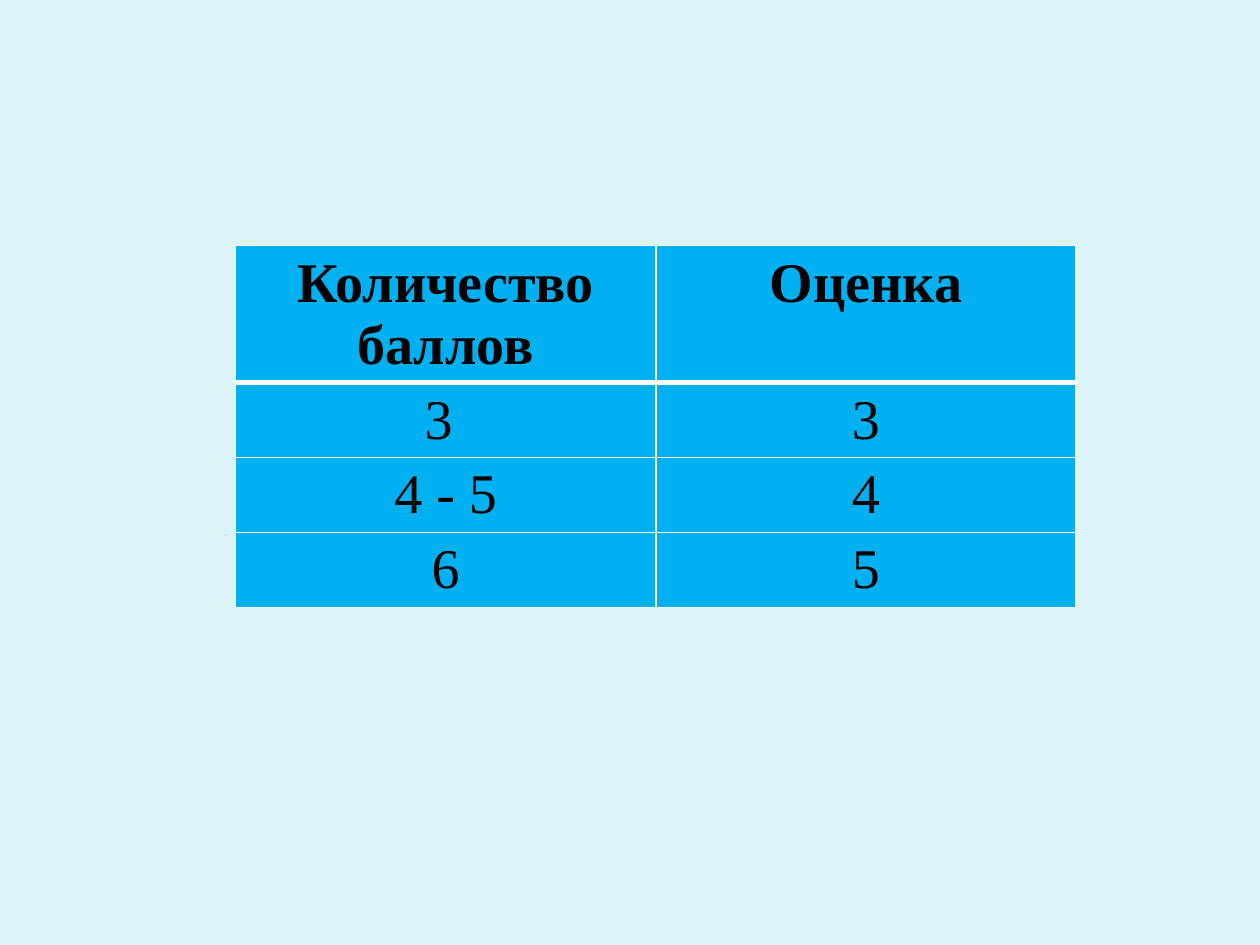
"""Build a slide with a table that turns points into grades."""
from lxml.etree import SubElement
from pptx import Presentation
from pptx.dml.color import RGBColor
from pptx.enum.text import PP_ALIGN as Align
from pptx.oxml.ns import qn
from pptx.util import Inches, Pt

BACKGROUND = RGBColor(0xDB, 0xF5, 0xF9)
CELL_FILL = RGBColor(0x00, 0xB0, 0xF0)
BORDER = RGBColor(0xFF, 0xFF, 0xFF)
TEXT = RGBColor(0x00, 0x00, 0x00)
FONT = "Times New Roman"
ROWS = [
    (["Количество", "баллов"], ["Оценка"]),
    (["3 "], ["3"]),
    (["4 - 5"], ["4"]),
    (["6"], ["5"]),
]


def set_borders(cell, widths):
    properties = cell._tc.get_or_add_tcPr()
    for index, (side, width) in enumerate(widths.items()):
        line = properties.makeelement(qn(f"a:ln{side}"), {"w": str(Pt(width))})
        fill = SubElement(line, qn("a:solidFill"))
        SubElement(fill, qn("a:srgbClr"), val=str(BORDER))
        properties.insert(index, line)


def write_cell(cell, lines, bold):
    frame = cell.text_frame
    for index, text in enumerate(lines):
        paragraph = frame.add_paragraph() if index else frame.paragraphs[0]
        paragraph.alignment = Align.CENTER
        run = paragraph.add_run()
        run.text = text
        run.font.name = FONT
        run.font.size = Pt(32)
        run.font.bold = bold
        run.font.color.rgb = TEXT


def add_grade_table(slide, left, top, width, height):
    shape = slide.shapes.add_table(len(ROWS), len(ROWS[0]), left, top, width, height)
    table = shape.table
    for row_index, row in enumerate(ROWS):
        table.rows[row_index].height = Inches(0.41)
        header = row_index == 0
        widths = {"L": 1, "R": 1, "T": 3 if row_index == 1 else 1, "B": 3 if header else 1}
        for column_index, lines in enumerate(row):
            cell = table.cell(row_index, column_index)
            cell.fill.solid()
            cell.fill.fore_color.rgb = CELL_FILL
            set_borders(cell, widths)
            write_cell(cell, lines, header)
    shape.height = height


def main():
    presentation = Presentation()
    presentation.slide_width = Inches(10)
    presentation.slide_height = Inches(7.5)
    slide = presentation.slides.add_slide(presentation.slide_layouts[6])
    slide.background.fill.solid()
    slide.background.fill.fore_color.rgb = BACKGROUND
    add_grade_table(slide, Inches(1.87), Inches(1.95), Inches(6.67), Inches(3.07))
    presentation.save("out.pptx")


if __name__ == "__main__":
    main()
